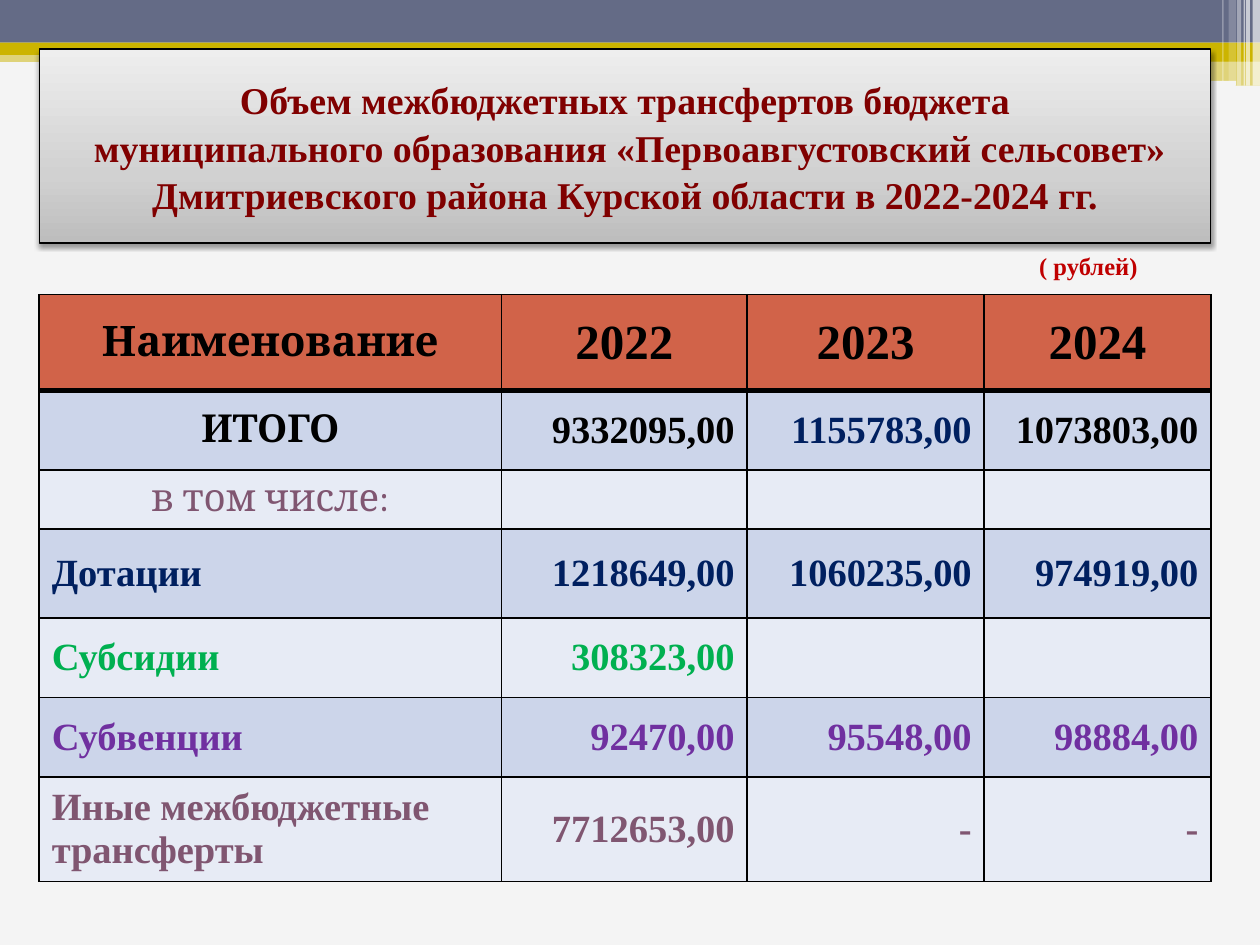
from copy import deepcopy

from lxml.etree import SubElement
from pptx import Presentation
from pptx.dml.color import RGBColor
from pptx.enum.shapes import MSO_SHAPE as Shape
from pptx.enum.text import MSO_ANCHOR as Anchor, MSO_AUTO_SIZE as AutoSize, PP_ALIGN as Align
from pptx.oxml.ns import qn
from pptx.util import Cm, Pt

COLORS = {
    "page": "F4F4F4", "slate": "646B86", "gold": "CCB400", "white": "FFFFFF",
    "black": "000000", "maroon": "800000", "red": "C00000", "header": "D16349",
    "band_dark": "CCD5EA", "band_light": "E7EBF5", "navy": "002060",
    "green": "00B050", "purple": "7030A0", "mauve": "805671",
    "silver_dark": "BDBDBD", "silver": "D1D1D1", "silver_light": "EEEEEE",
}
SERIF, HEADING = "Times New Roman", "Cambria"
LEFT, WIDTH = 0.79, 23.62

BARS = [
    (0, 1.02, 25.4, 0.23, "gold", 50),
    (0, 0, 25.4, 0.86, "slate", 100),
    (0, 0.86, 25.4, 0.25, "gold", 100),
    (15.04, 0.99, 10.36, 0.25, "gold", 100),
    (15.04, 1.22, 10.36, 0.51, "gold", 50),
]
STRIPES = [
    (25.25, 0.15, 1.73, 65), (25.12, 0.08, 1.73, 65), (25.07, 0.03, 1.73, 60),
    (24.94, 0.08, 1.73, 40), (24.77, 0.15, 1.63, 20), (24.64, 0.03, 1.63, 30),
]

COLUMN_WIDTHS = [9.32, 4.95, 4.78, 4.57]
ROW_HEIGHTS = [1.93, 1.6, 1.19, 1.8, 1.6, 1.6, 2.11]
ROWS = [
    ("black", ["Наименование", "2022", "2023", "2024"]),
    ("black", ["ИТОГО", "9332095,00", "1155783,00", "1073803,00"]),
    ("mauve", ["в том числе:", "", "", ""]),
    ("navy", ["Дотации", "1218649,00", "1060235,00", "974919,00"]),
    ("green", ["Субсидии", "308323,00", "", ""]),
    ("purple", ["Субвенции", "92470,00", "95548,00", "98884,00"]),
    ("mauve", ["Иные межбюджетные трансферты", "7712653,00", "-", "-"]),
]
TITLE = ("Объем межбюджетных трансфертов бюджета\v муниципального образования "
         "«Первоавгустовский сельсовет» Дмитриевского района Курской области "
         "в 2022-2024 гг.")


def rgb(name):
    return RGBColor.from_string(COLORS[name])


class SlideBuilder:
    def __init__(self, page):
        self.page = page
        fill = page.background.fill
        fill.solid()
        fill.fore_color.rgb = rgb("page")

    def style(self, para, size, color, align=Align.LEFT, font=SERIF, bold=True):
        para.alignment = align
        para.font.size = Pt(size)
        para.font.name = font
        para.font.bold = bold
        para.font.color.rgb = rgb(color)

    def bar(self, left, top, width, height, color, opacity=100, shape=Shape.RECTANGLE):
        bar = self.page.shapes.add_shape(shape, Cm(left), Cm(top), Cm(width), Cm(height))
        bar.shadow.inherit = False
        bar.line.fill.background()
        bar.fill.solid()
        bar.fill.fore_color.rgb = rgb(color)
        if opacity < 100:
            tint = bar.element.spPr.find(".//" + qn("a:srgbClr"))
            SubElement(tint, qn("a:alpha"), val=str(opacity * 1000))

    def title(self, text, left, top, width, height):
        box = self.page.shapes.title
        box.left, box.top, box.width, box.height = Cm(left), Cm(top), Cm(width), Cm(height)
        box.fill.gradient()
        box.fill.gradient_angle = 90
        stops = box.element.spPr.find(".//" + qn("a:gsLst"))
        stops.append(deepcopy(stops[0]))
        shades = [(0, "silver_dark"), (0.35, "silver"), (1, "silver_light")]
        for stop, (position, color) in zip(box.fill.gradient_stops, shades):
            stop.position = position
            stop.color.rgb = rgb(color)
        box.line.color.rgb = rgb("black")
        box.line.width = Pt(0.75)
        self.shadow(box)
        frame = box.text_frame
        frame.text = text
        frame.word_wrap = True
        frame.auto_size = AutoSize.NONE
        frame.vertical_anchor = Anchor.MIDDLE
        para = frame.paragraphs[0]
        para.line_spacing = 1.04
        self.style(para, 21.6, "maroon", Align.CENTER)
        box.element.getparent().append(box.element)

    def shadow(self, box):
        effects = SubElement(box.element.spPr, qn("a:effectLst"))
        shadow = SubElement(effects, qn("a:outerShdw"), blurRad=str(Pt(3.1)),
                            dist=str(Pt(1.6)), dir="5400000", rotWithShape="0")
        color = SubElement(shadow, qn("a:srgbClr"), val=COLORS["black"])
        SubElement(color, qn("a:alpha"), val="38000")

    def label(self, text, left, top, width, height):
        box = self.page.shapes.add_textbox(Cm(left), Cm(top), Cm(width), Cm(height))
        box.text_frame.word_wrap = True
        box.text_frame.text = text
        self.style(box.text_frame.paragraphs[0], 14, "red")

    def borders(self, cell, top=1, bottom=1):
        properties = cell._tc.get_or_add_tcPr()
        for index, (side, width) in enumerate(
                [("lnL", 1), ("lnR", 1), ("lnT", top), ("lnB", bottom)]):
            line = properties.makeelement(qn("a:" + side), {"w": str(Pt(width))})
            fill = SubElement(line, qn("a:solidFill"))
            SubElement(fill, qn("a:srgbClr"), val=COLORS["black"])
            properties.insert(index, line)

    def cell(self, cell, text, row, column, color):
        header = row == 0
        cell.fill.solid()
        band = "band_dark" if row % 2 else "band_light"
        cell.fill.fore_color.rgb = rgb("header" if header else band)
        cell.vertical_anchor = Anchor.MIDDLE
        self.borders(cell, top=3 if row == 1 else 1, bottom=3 if header else 1)
        cell.text = text
        centered = header or (column == 0 and row < 3)
        align = Align.CENTER if centered else Align.RIGHT if column else Align.LEFT
        font = HEADING if column == 0 and row < 3 else SERIF
        size = (28 if column else 24) if header else 22
        self.style(cell.text_frame.paragraphs[0], size, color, align, font, row != 2)

    def table(self, rows, left, top):
        frame = self.page.shapes.add_table(
            len(rows), len(COLUMN_WIDTHS), Cm(left), Cm(top),
            Cm(sum(COLUMN_WIDTHS)), Cm(sum(ROW_HEIGHTS)))
        table = frame.table
        for column, width in zip(table.columns, COLUMN_WIDTHS):
            column.width = Cm(width)
        for row, height in zip(table.rows, ROW_HEIGHTS):
            row.height = Cm(height)
        for row, (color, texts) in enumerate(rows):
            for column, text in enumerate(texts):
                shade = "navy" if (row, column) == (1, 2) else color
                self.cell(table.cell(row, column), text, row, column, shade)


def main():
    deck = Presentation()
    deck.slide_width, deck.slide_height = Cm(25.4), Cm(19.05)
    builder = SlideBuilder(deck.slides.add_slide(deck.slide_layouts[5]))
    for bar in BARS:
        builder.bar(*bar)
    builder.bar(20.47, 1.63, 4.45, 0.1, "page", shape=Shape.ROUNDED_RECTANGLE)
    for left, width, height, opacity in STRIPES:
        builder.bar(left, 0, width, height, "white", opacity)
    builder.table(ROWS, LEFT, 5.94)
    builder.title(TITLE, LEFT, 0.99, WIDTH, 3.91)
    builder.label("( рублей)", 20.7, 4.93, 3.61, 0.84)
    deck.save("out.pptx")


if __name__ == "__main__":
    main()
